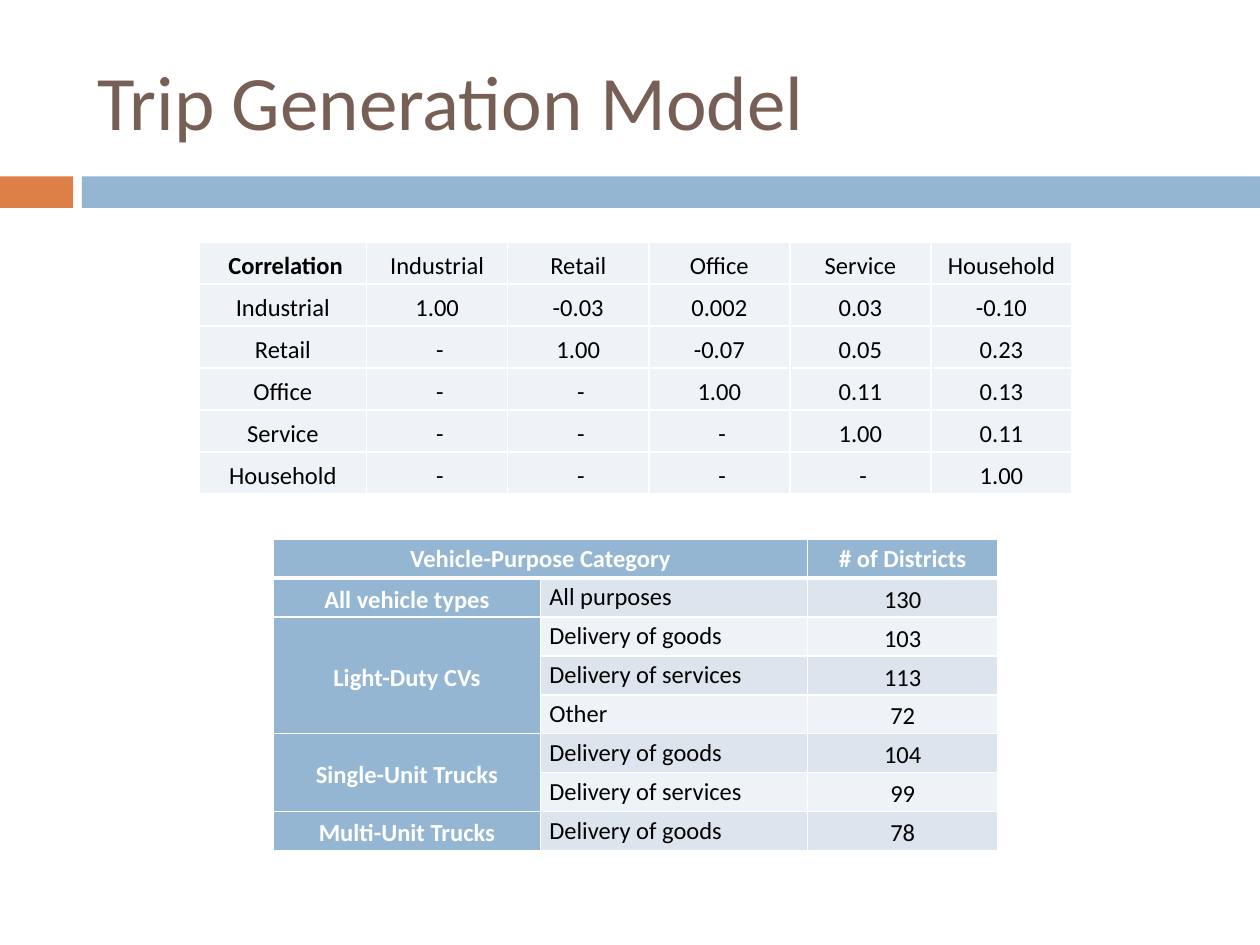
from lxml import etree
from pptx import Presentation
from pptx.dml.color import RGBColor
from pptx.enum.shapes import MSO_SHAPE
from pptx.enum.text import MSO_ANCHOR, PP_ALIGN
from pptx.oxml.ns import qn
from pptx.util import Inches, Pt

RECTANGLE = MSO_SHAPE.RECTANGLE
LEFT, CENTER = PP_ALIGN.LEFT, PP_ALIGN.CENTER
TOP, MIDDLE = MSO_ANCHOR.TOP, MSO_ANCHOR.MIDDLE

COLORS = {
    "orange": "DD8047", "blue": "94B6D2", "brown": "775F55",
    "pale": "EEF3F7", "band": "DCE5EE", "white": "FFFFFF", "black": "000000",
}
FONT = "Calibri"

# Content: labels and dashes below start with a no-break space
TITLE = "Trip Generation Model"
DASH = " -"
SECTORS = ["Industrial", "Retail", "Office", "Service", "Household"]
UPPER_TRIANGLE = [
    ["1.00", "-0.03", "0.002", "0.03", "-0.10"],
    ["1.00", "-0.07", "0.05", "0.23"],
    ["1.00", "0.11", "0.13"],
    ["1.00", "0.11"],
    ["1.00"],
]
DISTRICT_HEADER = ["Vehicle-Purpose Category", "", "# of Districts"]
DISTRICTS = [
    ("All vehicle types", [("All purposes", "130")]),
    ("Light-Duty CVs", [("Delivery of goods", "103"),
                        ("Delivery of services", "113"),
                        ("Other", "72")]),
    ("Single-Unit Trucks", [("Delivery of goods", "104"),
                            ("Delivery of services", "99")]),
    ("Multi-Unit Trucks", [("Delivery of goods", "78")]),
]


def rgb(name):
    return RGBColor.from_string(COLORS[name])


def write_text(frame, text, size=14, color="black", bold=False, align=CENTER, spacing=1.15):
    paragraph = frame.paragraphs[0]
    paragraph.alignment = align
    paragraph.line_spacing = spacing
    run = paragraph.add_run()
    run.text = text
    font = run.font
    font.name, font.size, font.bold = FONT, Pt(size), bold
    font.color.rgb = rgb(color)


def add_bar(slide, left, width, color):
    bar = slide.shapes.add_shape(RECTANGLE, Inches(left), Inches(1.4), Inches(width), Inches(0.25))
    bar.shadow.inherit = False
    bar.fill.solid()
    bar.fill.fore_color.rgb = rgb(color)
    bar.line.fill.background()


def add_grid(slide, left, top, widths, row_count, row_height):
    frame = slide.shapes.add_table(row_count, len(widths), Inches(left), Inches(top),
                                   Inches(sum(widths)), Inches(row_height * row_count))
    table = frame.table
    table.first_row = table.horz_banding = False
    for column, width in zip(table.columns, widths):
        column.width = Inches(width)
    for row in table.rows:
        row.height = Inches(row_height)
    return table


def style_cell(cell, fill, margins, anchor=MIDDLE, top_line=1, bottom_line=1):
    cell.fill.solid()
    cell.fill.fore_color.rgb = rgb(fill)
    cell.vertical_anchor = anchor
    cell.margin_left, cell.margin_top, cell.margin_right, cell.margin_bottom = map(Inches, margins)
    properties = cell._tc.get_or_add_tcPr()
    borders = [("a:lnL", 1), ("a:lnR", 1), ("a:lnT", top_line), ("a:lnB", bottom_line)]
    for index, (tag, width) in enumerate(borders):
        line = etree.Element(qn(tag), w=str(Pt(width)))
        solid = etree.SubElement(line, qn("a:solidFill"))
        etree.SubElement(solid, qn("a:srgbClr"), val=COLORS["white"])
        properties.insert(index, line)


def add_correlation_table(slide):
    rows = [[" Correlation"] + SECTORS]
    for index, values in enumerate(UPPER_TRIANGLE):
        rows.append([SECTORS[index]] + [DASH] * index + values)
    table = add_grid(slide, 1.58, 1.92, [1.33] + [1.12] * len(SECTORS), len(rows), 2 / len(rows))
    for r, row in enumerate(rows):
        for c, text in enumerate(row):
            cell = table.cell(r, c)
            style_cell(cell, "pale", (0.01, 0.01, 0.01, 0))
            write_text(cell.text_frame, text, bold=(r == c == 0))


def add_district_table(slide):
    rows, groups = [DISTRICT_HEADER], []
    for vehicle, purposes in DISTRICTS:
        groups.append((len(rows), len(rows) + len(purposes) - 1))
        for index, (purpose, count) in enumerate(purposes):
            rows.append(["" if index else vehicle, purpose, count])
    table = add_grid(slide, 2.17, 4.28, [2.12, 2.12, 1.51], len(rows), 2.47 / len(rows))

    for r, row in enumerate(rows):
        for c, text in enumerate(row):
            cell = table.cell(r, c)
            heading = r == 0 or c == 0
            fill = "blue" if heading else "band" if r % 2 else "pale"
            style_cell(cell, fill, (0.07, 0, 0.07, 0),
                       anchor=TOP if r == 0 or c == 1 else MIDDLE,
                       top_line=3 if r == 1 else 1, bottom_line=3 if r == 0 else 1)
            if text:
                write_text(cell.text_frame, text, bold=heading,
                           color="white" if heading else "black",
                           align=LEFT if c == 1 and r else CENTER)

    # Merge the header pair and each vehicle group
    table.cell(0, 0).merge(table.cell(0, 1))
    for first, last in groups:
        if last > first:
            table.cell(first, 0).merge(table.cell(last, 0))


def main():
    presentation = Presentation()
    presentation.slide_width, presentation.slide_height = Inches(10), Inches(7.5)
    slide = presentation.slides.add_slide(presentation.slide_layouts[5])

    # Divider bars
    add_bar(slide, 0, 0.58, "orange")
    add_bar(slide, 0.65, 9.35, "blue")

    # Title
    title = slide.shapes.title
    title.left, title.top, title.width, title.height = map(Inches, (0.67, 0.25, 8.92, 1.08))
    title.text_frame.vertical_anchor = MIDDLE
    write_text(title.text_frame, TITLE, size=44, color="brown", align=LEFT, spacing=1.0)

    # Tables
    add_correlation_table(slide)
    add_district_table(slide)
    presentation.save("out.pptx")


if __name__ == "__main__":
    main()
